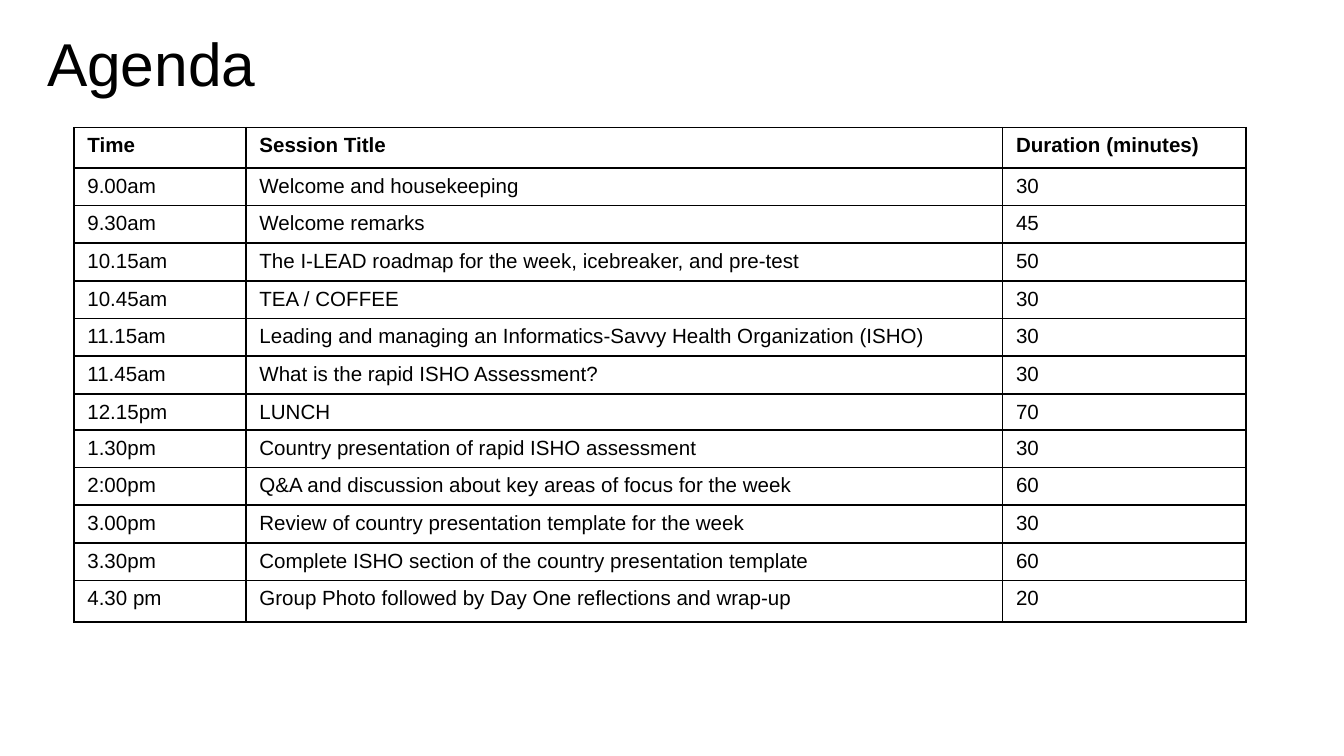
from lxml.etree import SubElement
from pptx import Presentation
from pptx.dml.color import RGBColor
from pptx.enum.text import MSO_ANCHOR, PP_ALIGN
from pptx.oxml.ns import qn
from pptx.util import Inches, Pt

COLORS = {"text": "000000", "border": "000000", "background": "FFFFFF"}
FONT = "Arial"
COLUMN_WIDTHS = [1.28, 5.63, 1.81]
ROW_HEIGHT = 0.28
SPECIAL_ROW_HEIGHTS = {0: 0.3, 7: 0.27, 12: 0.31}
AGENDA = [
    ("Time", "Session Title", "Duration (minutes)"),
    ("9.00am", "Welcome and housekeeping", "30"),
    ("9.30am", "Welcome remarks", "45"),
    ("10.15am", "The I-LEAD roadmap for the week, icebreaker, and pre-test", "50"),
    ("10.45am", "TEA / COFFEE", "30"),
    ("11.15am", "Leading and managing an Informatics-Savvy Health Organization (ISHO)", "30"),
    ("11.45am", "What is the rapid ISHO Assessment?", "30"),
    ("12.15pm", "LUNCH", "70"),
    ("1.30pm", "Country presentation of rapid ISHO assessment", "30"),
    ("2:00pm", "Q&A and discussion about key areas of focus for the week", "60"),
    ("3.00pm", "Review of country presentation template for the week", "30"),
    ("3.30pm", "Complete ISHO section of the country presentation template", "60"),
    ("4.30 pm", "Group Photo followed by Day One reflections and wrap-up", "20"),
]


def add_span(para, text, size, bold=False):
    span = para.add_run()
    span.text = text
    span.font.name = FONT
    span.font.size = Pt(size)
    span.font.bold = bold
    span.font.color.rgb = RGBColor.from_string(COLORS["text"])


def set_title(page, text):
    title = page.shapes.title
    title.left, title.top = Inches(0.28), Inches(0.21)
    title.width, title.height = Inches(8.27), Inches(0.57)
    frame = title.text_frame
    frame.word_wrap = True
    frame.vertical_anchor = MSO_ANCHOR.BOTTOM
    frame.margin_left = frame.margin_right = Inches(0.07)
    frame.margin_top = frame.margin_bottom = Inches(0.04)
    para = frame.paragraphs[0]
    para.alignment = PP_ALIGN.LEFT
    para.line_spacing = 0.9
    add_span(para, text, 32.4)


def add_borders(cell):
    properties = cell._tc.get_or_add_tcPr()
    for side in ("lnL", "lnR", "lnT", "lnB"):
        line = SubElement(properties, qn(f"a:{side}"), w=str(Pt(1)))
        fill = SubElement(line, qn("a:solidFill"))
        SubElement(fill, qn("a:srgbClr"), val=COLORS["border"])


def fill_cell(cell, text, bold):
    cell.margin_left = cell.margin_right = Inches(0.1)
    cell.margin_top, cell.margin_bottom = Inches(0.05), Inches(0.04)
    cell.vertical_anchor = MSO_ANCHOR.TOP
    add_borders(cell)
    cell.fill.background()
    add_span(cell.text_frame.paragraphs[0], text, 11, bold)


def add_agenda_table(page):
    heights = [SPECIAL_ROW_HEIGHTS.get(row, ROW_HEIGHT) for row in range(len(AGENDA))]
    table = page.shapes.add_table(
        len(AGENDA), len(COLUMN_WIDTHS), Inches(0.55), Inches(0.95),
        Inches(sum(COLUMN_WIDTHS)), Inches(sum(heights))).table
    table.first_row = table.horz_banding = False
    for column, width in zip(table.columns, COLUMN_WIDTHS):
        column.width = Inches(width)
    for index, (row, height, texts) in enumerate(zip(table.rows, heights, AGENDA)):
        row.height = Inches(height)
        for cell, text in zip(row.cells, texts):
            fill_cell(cell, text, bold=index == 0)


def main():
    deck = Presentation()
    deck.slide_width = Inches(10)
    deck.slide_height = deck.slide_width * 9 // 16
    page = deck.slides.add_slide(deck.slide_layouts.get_by_name("Title Only"))
    page.background.fill.solid()
    page.background.fill.fore_color.rgb = RGBColor.from_string(COLORS["background"])
    set_title(page, "Agenda")
    add_agenda_table(page)
    deck.save("out.pptx")


if __name__ == "__main__":
    main()
